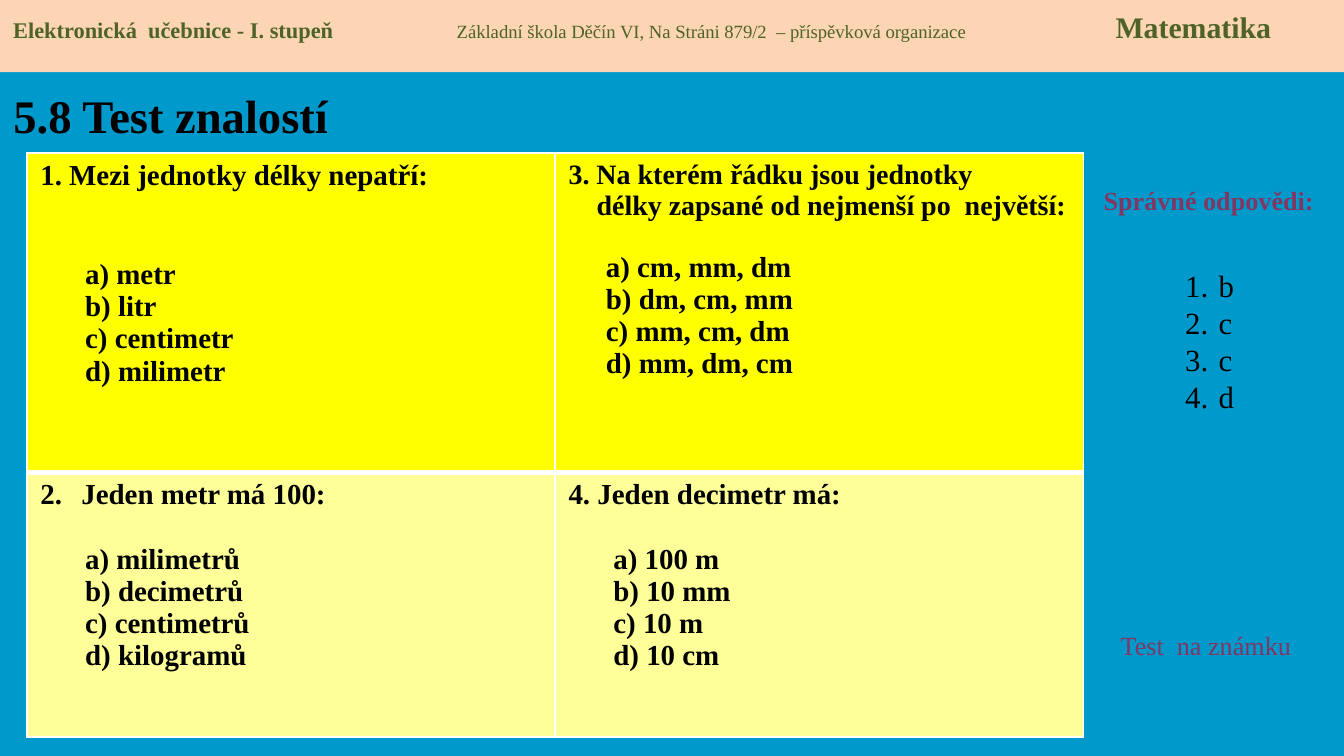
from lxml.etree import SubElement
from pptx import Presentation
from pptx.dml.color import RGBColor
from pptx.enum.shapes import MSO_SHAPE
from pptx.enum.text import MSO_ANCHOR, PP_ALIGN
from pptx.oxml import parse_xml
from pptx.oxml.ns import nsdecls, qn
from pptx.util import Pt

HUES = {
    "page": "0099CC", "band": "FCD5B5", "green": "4F6228", "plum": "813763",
    "ink": "000000", "top": "FFFF00", "low": "FFFF99", "rule": "FFFFFF",
}


def style(para, size, hue="ink", bold=False):
    for run in para.runs:
        font = run.font
        font.name = "Times New Roman"
        font.size = Pt(size)
        font.bold = bold
        font.color.rgb = RGBColor.from_string(HUES[hue])


def indent(para, left, hang=0, start=None):
    props = para._p.get_or_add_pPr()
    props.set("marL", str(Pt(left)))
    props.set("indent", str(Pt(-hang)))
    if start:
        SubElement(props, qn("a:buFont"), typeface="+mj-lt")
        SubElement(props, qn("a:buAutoNum"), type="arabicPeriod", startAt=str(start))


deck = Presentation()
deck.slide_width, deck.slide_height = Pt(720), Pt(405)
slide = deck.slides.add_slide(deck.slide_layouts[5])
slide.background.fill.solid()
slide.background.fill.fore_color.rgb = RGBColor.from_string(HUES["page"])

# Title
title = slide.shapes.title
title.left, title.top, title.width, title.height = Pt(0), Pt(38), Pt(230), Pt(47)
frame = title.text_frame
frame.text = "5.8 Test znalostí"
frame.vertical_anchor = MSO_ANCHOR.MIDDLE
frame.paragraphs[0].alignment = PP_ALIGN.LEFT
style(frame.paragraphs[0], 25, bold=True)

# Questions: row, column, heading, number, option indent, gap, options
tests = [
    (0, 0, ["1. Mezi jednotky délky nepatří:"], None, 24, 36,
     ["metr", "litr", "centimetr", "milimetr"]),
    (0, 1, ["3. Na kterém řádku jsou jednotky",
            "délky zapsané od nejmenší po  největší:"], None, 20, 16,
     ["cm, mm, dm", "dm, cm, mm", "mm, cm, dm", "mm, dm, cm"]),
    (1, 0, ["Jeden metr má 100:"], 2, 24, 17.7,
     ["milimetrů", "decimetrů", "centimetrů", "kilogramů"]),
    (1, 1, ["4. Jeden decimetr má:"], None, 24, 17.7,
     ["100 m", "10 mm", "10 m", "10 cm"]),
]
table = slide.shapes.add_table(2, 2, Pt(14.4), Pt(82), Pt(566), Pt(313)).table
table.first_row = table.horz_banding = False
for col in table.columns:
    col.width = Pt(283)
for row, high in zip(table.rows, (171, 142)):
    row.height = Pt(high)

for row, col, heads, start, left, gap, picks in tests:
    cell = table.cell(row, col)
    cell.fill.solid()
    cell.fill.fore_color.rgb = RGBColor.from_string(HUES[("top", "low")[row]])
    lines = heads + [f"{mark}) {pick}" for mark, pick in zip("abcd", picks)]
    cell.text_frame.text = "\n".join(lines)
    paras = cell.text_frame.paragraphs
    for i, para in enumerate(paras):
        style(para, 15 if i < len(heads) and len(heads) > 1 else 15.5, bold=True)
        if i >= len(heads):
            indent(para, left)
        elif i:
            indent(para, 15)
    paras[len(heads)].space_before = Pt(gap)
    if start:
        indent(paras[0], 22, 22, start)

    # Cell borders, thick between the rows
    wide = {"L": 1, "R": 1, "T": 3 if row else 1, "B": 1 if row else 3}
    props = cell._tc.get_or_add_tcPr()
    for i, (side, size) in enumerate(wide.items()):
        props.insert(i, parse_xml(
            f'<a:ln{side} {nsdecls("a")} w="{Pt(size)}"><a:solidFill>'
            f'<a:srgbClr val="{HUES["rule"]}"/></a:solidFill></a:ln{side}>'))

# Answers and note beside the table
notes = [
    (579.6, 95, 136, 24.5, "Správné odpovědi:", 14, "plum", True),
    (627.8, 118.8, 40, 143, "b\nc\nc\nd", 16.5, "ink", False),
    (593.3, 333.4, 113, 24.5, "Test  na známku", 14, "plum", False),
]
for left, top, wide, high, text, size, hue, bold in notes:
    frame = slide.shapes.add_textbox(Pt(left), Pt(top), Pt(wide), Pt(high)).text_frame
    frame.word_wrap = True
    frame.text = text
    for para in frame.paragraphs:
        style(para, size, hue, bold)
        if bold:
            para.alignment = PP_ALIGN.CENTER
        if "\n" in text:
            frame.margin_top = Pt(24)
            indent(para, 18, 18, 1)

# Header band
band = slide.shapes.add_shape(MSO_SHAPE.RECTANGLE, Pt(0), Pt(0), Pt(720), Pt(38.7))
band.shadow.inherit = False
band.fill.solid()
band.fill.fore_color.rgb = RGBColor.from_string(HUES["band"])
band.line.fill.background()
frame = band.text_frame
frame.word_wrap = True
frame.vertical_anchor = MSO_ANCHOR.TOP
frame.margin_top = Pt(4.8)
para = frame.paragraphs[0]
para.alignment = PP_ALIGN.LEFT
for text in ("Elektronická  učebnice - I. stupeň\t",
             "Základní škola Děčín VI, Na Stráni 879/2  – příspěvková organizace\t",
             "Matematika"):
    para.add_run().text = text
style(para, 12, "green", True)
para.runs[1].font.size, para.runs[1].font.bold = Pt(10), False
para.runs[2].font.size = Pt(16)
tabs = SubElement(para._p.get_or_add_pPr(), qn("a:tabLst"))
for stop in (237.6, 590.6):
    SubElement(tabs, qn("a:tab"), pos=str(Pt(stop)), algn="l")

deck.save("out.pptx")
